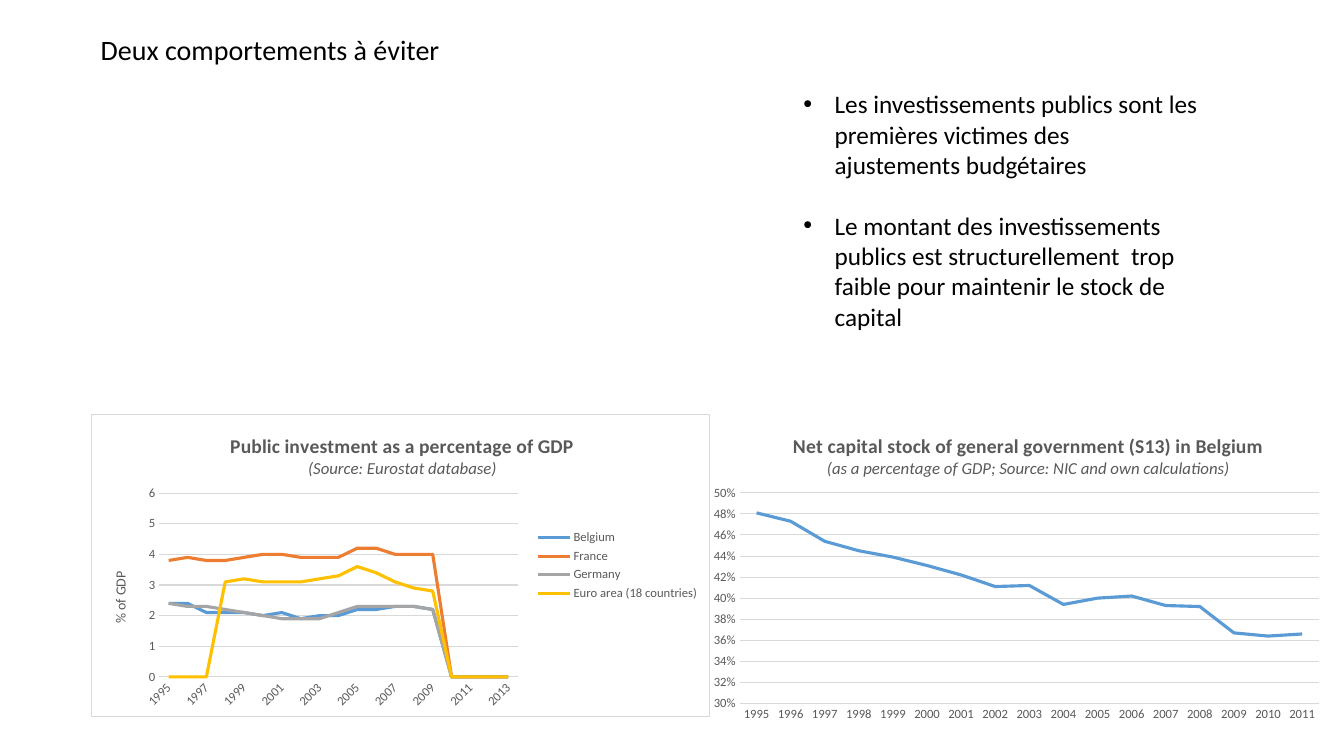
import pptx
import pptx.chart.data
import pptx.dml.color
import pptx.enum.chart
import pptx.enum.text
import pptx.oxml
import pptx.oxml.ns
import pptx.util
from pptx.util import Inches, Pt

# Content
FONT = "Calibri"
BLACK, GREY, GRID, WHITE = "000000", "595959", "D9D9D9", "FFFFFF"
HEADING = "Deux comportements à éviter"
BULLETS = [
    "Les investissements publics sont les premières victimes des ajustements budgétaires",
    "Le montant des investissements publics est structurellement  trop faible "
    "pour maintenir le stock de capital",
]
INVESTMENT = {
    "box": (0.9, 4.11, 6.14, 3),
    "title": ("Public investment as a percentage of GDP", "(Source: Eurostat database)"),
    "title_at": (0.22, 0.05),
    "plot_at": (0.11, 0.26, 0.58, 0.61),
    "years": range(1995, 2014),
    "series": [
        ("Belgium", "5B9BD5",
         [2.4, 2.4, 2.1, 2.1, 2.1, 2, 2.1, 1.9, 2, 2, 2.2, 2.2, 2.3, 2.3, 2.2]),
        ("France", "ED7D31",
         [3.8, 3.9, 3.8, 3.8, 3.9, 4, 4, 3.9, 3.9, 3.9, 4.2, 4.2, 4, 4, 4]),
        ("Germany", "A5A5A5",
         [2.4, 2.3, 2.3, 2.2, 2.1, 2, 1.9, 1.9, 1.9, 2.1, 2.3, 2.3, 2.3, 2.3, 2.2]),
        ("Euro area (18 countries)", "FFC000",
         [None, None, None, 3.1, 3.2, 3.1, 3.1, 3.1, 3.2, 3.3, 3.6, 3.4, 3.1, 2.9, 2.8]),
    ],
    "scale": (0, 6, 1),
    "format": "General",
}
CAPITAL = {
    "box": (6.96, 4.11, 6.25, 3.12),
    "title": ("Net capital stock of general government (S13) in Belgium",
              "(as a percentage of GDP; Source: NIC and own calculations)"),
    "title_at": (0.14, 0.05),
    "plot_at": (0.06, 0.25, 0.92, 0.67),
    "years": range(1995, 2012),
    "series": [
        ("Series 1", "5B9BD5",
         [0.481, 0.473, 0.454, 0.445, 0.439, 0.431, 0.422, 0.411, 0.412,
          0.394, 0.4, 0.402, 0.393, 0.392, 0.367, 0.364, 0.366]),
    ],
    "scale": (0.3, 0.5, 0.02),
    "format": "0%",
}


def rgb(value):
    return pptx.dml.color.RGBColor.from_string(value)


def style(font, size, color, bold=False, italic=False):
    font.name, font.size, font.bold, font.italic = FONT, Pt(size), bold, italic
    font.color.rgb = rgb(color)


def stroke(line, color, width):
    line.color.rgb = rgb(color)
    line.width = Pt(width)


def chart_xml(tag, body):
    spaces = pptx.oxml.ns.nsdecls("c", "a")
    return pptx.oxml.parse_xml(f"<c:{tag} {spaces}>{body}</c:{tag}>")


def add_text(slide, box, lines, size):
    frame = slide.shapes.add_textbox(*map(Inches, box)).text_frame
    frame.word_wrap = True
    frame.auto_size = pptx.enum.text.MSO_AUTO_SIZE.SHAPE_TO_FIT_TEXT
    frame.text = "\n".join(lines)
    for paragraph in frame.paragraphs:
        style(paragraph.runs[0].font, size, BLACK)
    return frame


def set_layout(parent, position, place, inner=False):
    for layout in parent.findall(pptx.oxml.ns.qn("c:layout")):
        parent.remove(layout)
    body = '<c:layoutTarget val="inner"/>' if inner else ""
    keys = ("x", "y", "w", "h")[:len(place)]
    body += "".join(f'<c:{key}Mode val="edge"/>' for key in keys[:2])
    body += "".join(f'<c:{key} val="{value}"/>' for key, value in zip(keys, place))
    parent.insert(position, chart_xml("layout", f"<c:manualLayout>{body}</c:manualLayout>"))


def set_chart_area(chart, fill, border):
    def solid(color):
        return f'<a:solidFill><a:srgbClr val="{color}"/></a:solidFill>' if color else "<a:noFill/>"
    area = chart_xml("spPr", f'{solid(fill)}<a:ln w="9525">{solid(border)}</a:ln>')
    chart.element.find(pptx.oxml.ns.qn("c:chart")).addnext(area)


def add_line_chart(slide, content):
    data = pptx.chart.data.CategoryChartData(number_format=content["format"])
    data.categories = [str(year) for year in content["years"]]
    for name, _, values in content["series"]:
        data.add_series(name, values)
    chart = slide.shapes.add_chart(
        pptx.enum.chart.XL_CHART_TYPE.LINE, *map(Inches, content["box"]), data).chart
    style(chart.font, 10, BLACK)
    chart.has_legend = False

    # Title
    chart.has_title = True
    frame = chart.chart_title.text_frame
    frame.text = "\n".join(content["title"])
    style(frame.paragraphs[0].runs[0].font, 14, GREY, bold=True)
    style(frame.paragraphs[1].runs[0].font, 12, GREY, italic=True)
    chart.chart_title.include_in_layout = False
    set_layout(chart.chart_title._element, 1, content["title_at"])

    # Axes
    for axis in (chart.category_axis, chart.value_axis):
        axis.major_tick_mark = axis.minor_tick_mark = pptx.enum.chart.XL_TICK_MARK.NONE
        style(axis.tick_labels.font, 9, GREY)
    stroke(chart.category_axis.format.line, GRID, 0.75)
    axis = chart.value_axis
    axis.format.line.fill.background()
    axis.minimum_scale, axis.maximum_scale, axis.major_unit = content["scale"]
    axis.has_major_gridlines = True
    stroke(axis.major_gridlines.format.line, GRID, 0.75)
    axis.tick_labels.number_format = content["format"]
    axis.tick_labels.number_format_is_linked = False

    # Lines
    chart.plots[0].vary_by_categories = False
    for series, (_, color, _) in zip(chart.plots[0].series, content["series"]):
        series.smooth = False
        series.marker.style = pptx.enum.chart.XL_MARKER_STYLE.NONE
        stroke(series.format.line, color, 2.25)
    chart_element = chart.element.find(pptx.oxml.ns.qn("c:chart"))
    set_layout(chart_element.find(pptx.oxml.ns.qn("c:plotArea")), 0, content["plot_at"], inner=True)
    chart_element.find(pptx.oxml.ns.qn("c:dispBlanksAs")).set("val", "zero")
    return chart


def main():
    presentation = pptx.Presentation()
    presentation.slide_width, presentation.slide_height = Inches(13.33), Inches(7.5)
    slide = presentation.slides.add_slide(presentation.slide_layouts[6])

    # Public investment chart
    chart = add_line_chart(slide, INVESTMENT)
    set_chart_area(chart, WHITE, GRID)
    chart.has_legend = True
    chart.legend.position = pptx.enum.chart.XL_LEGEND_POSITION.RIGHT
    chart.legend.include_in_layout = False
    style(chart.legend.font, 9, GREY)
    axis_title = chart.value_axis.axis_title.text_frame
    axis_title.text = "% of GDP"
    style(axis_title.paragraphs[0].runs[0].font, 10, GREY)
    axis_title._txBody.bodyPr.set("rot", "-5400000")
    labels = chart.category_axis._element.find(pptx.oxml.ns.qn("c:txPr"))
    labels.find(pptx.oxml.ns.qn("a:bodyPr")).set("rot", "-2700000")

    # Heading and bullets
    add_text(slide, (0.9, 0.27, 11.78, 0.44), [HEADING], 20)
    frame = add_text(slide, (7.87, 0.83, 4.11, 2.52), BULLETS, 18)
    frame.paragraphs[1].space_before = Pt(22)
    for paragraph in frame.paragraphs:
        properties = paragraph._p.get_or_add_pPr()
        properties.set("marL", str(Inches(0.31)))
        properties.set("indent", str(-Inches(0.31)))
        spaces = pptx.oxml.ns.nsdecls("a")
        properties.append(pptx.oxml.parse_xml(f'<a:buFont {spaces} typeface="Arial"/>'))
        properties.append(pptx.oxml.parse_xml(f'<a:buChar {spaces} char="•"/>'))

    # Capital stock chart
    set_chart_area(add_line_chart(slide, CAPITAL), None, None)
    presentation.save("out.pptx")


if __name__ == "__main__":
    main()
